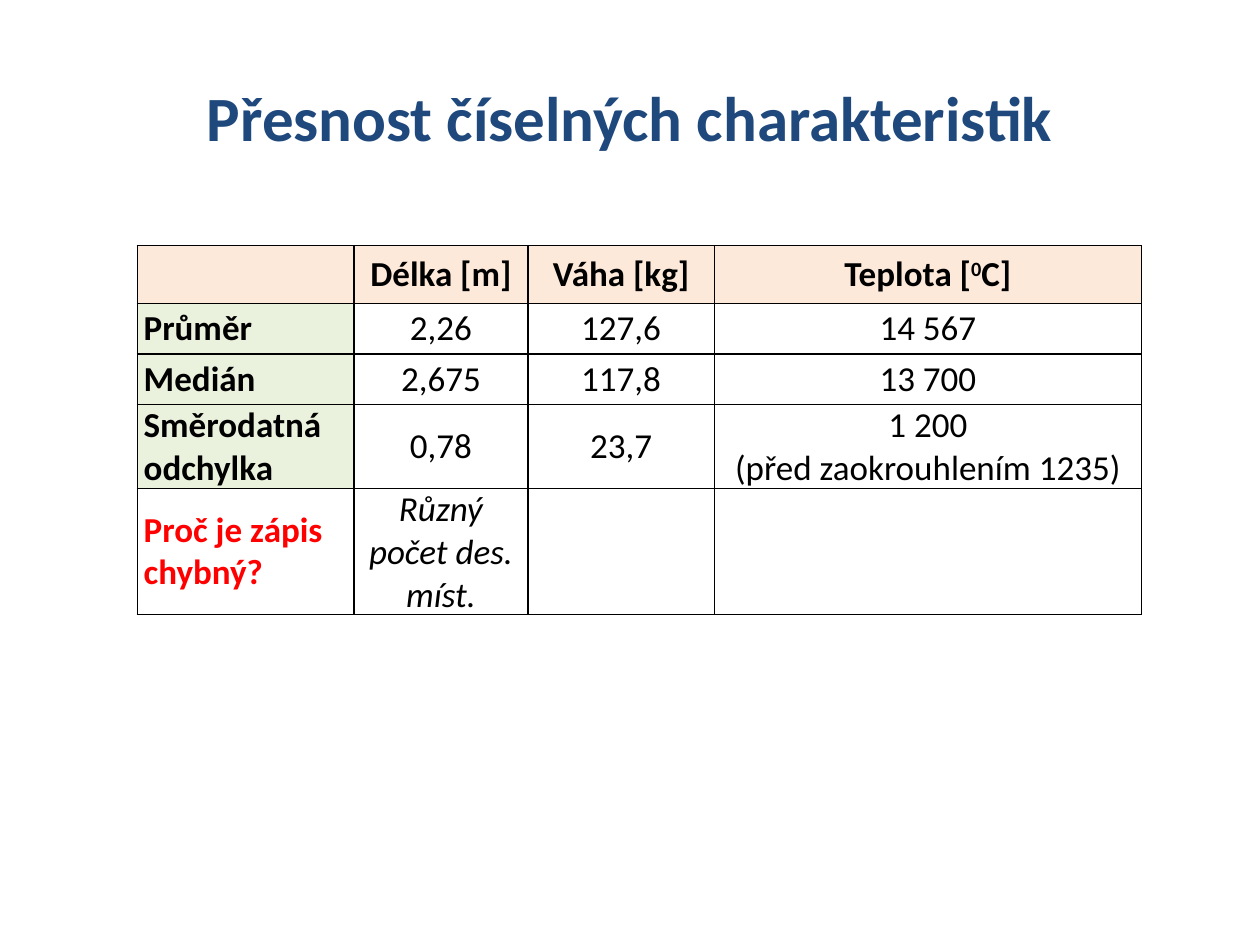
from lxml import etree
from pptx import Presentation
from pptx import util as u
from pptx.dml.color import RGBColor
from pptx.enum import text
from pptx.oxml.ns import qn

FONT = "Calibri"
COLORS = {
    "title": "1F497D",
    "text": "000000",
    "question": "FF0000",
    "border": "000000",
    "header": "FDE9D9",
    "label": "EAF1DD",
}
COLUMNS = [1.72, 1.38, 1.48, 3.39]
ROWS = [0.46, 0.4, 0.4, 0.65, 0.97]
CELLS = [
    ["", "Délka [m]", "Váha [kg]", ("Teplota [", "0", "C]")],
    ["Průměr", "2,26", "127,6", "14 567"],
    ["Medián", "2,675", "117,8", "13 700"],
    ["Směrodatná odchylka", "0,78", "23,7", "1 200\n(před zaokrouhlením 1235)"],
    ["Proč je zápis chybný?", "Různý počet des. míst.", "", ""],
]


def rgb(name):
    return RGBColor.from_string(COLORS[name])


def add_run(p, words, size, color, bold=False, italic=False):
    r = p.add_run()
    r.text = words
    r.font.name = FONT
    r.font.size = u.Pt(size)
    r.font.bold = bold
    r.font.italic = italic
    r.font.color.rgb = rgb(color)
    return r


def add_title(s, words):
    sp = s.shapes.add_textbox(u.Inches(0.5), u.Inches(0.3), u.Inches(9), u.Inches(1.25))
    tf = sp.text_frame
    tf.word_wrap = True
    tf.vertical_anchor = text.MSO_ANCHOR.MIDDLE
    p = tf.paragraphs[0]
    p.alignment = text.PP_ALIGN.CENTER
    add_run(p, words, 36, "title", bold=True)


def set_borders(cell):
    tc_pr = cell._tc.get_or_add_tcPr()
    for side in ("lnL", "lnR", "lnT", "lnB"):
        ln = etree.SubElement(tc_pr, qn(f"a:{side}"), w=str(u.Pt(1)))
        fill = etree.SubElement(ln, qn("a:solidFill"))
        etree.SubElement(fill, qn("a:srgbClr"), val=COLORS["border"])


def set_fill(cell, color):
    if color:
        cell.fill.solid()
        cell.fill.fore_color.rgb = rgb(color)
    else:
        cell.fill.background()


def write_cell(cell, content, align, **style):
    cell.vertical_anchor = text.MSO_ANCHOR.MIDDLE
    cell.margin_left = cell.margin_right = u.Inches(0.05)
    cell.margin_top = cell.margin_bottom = 0
    tf = cell.text_frame
    lines = [content] if isinstance(content, tuple) else [(t,) for t in content.split("\n")]
    for i, parts in enumerate(lines):
        p = tf.add_paragraph() if i else tf.paragraphs[0]
        p.alignment = align
        for j, words in enumerate(parts):
            r = add_run(p, words, 20, **style)
            if j == 1:
                r.font._element.set("baseline", "30000")


def add_statistics_table(s):
    frame = s.shapes.add_table(len(ROWS), len(COLUMNS), u.Inches(1.09), u.Inches(1.95),
                               u.Inches(sum(COLUMNS)), u.Inches(sum(ROWS)))
    table = frame.table
    table.first_row = table.horz_banding = False
    for column, width in zip(table.columns, COLUMNS):
        column.width = u.Inches(width)
    for row, height in zip(table.rows, ROWS):
        row.height = u.Inches(height)
    last = len(ROWS) - 1
    for i, contents in enumerate(CELLS):
        for j, content in enumerate(contents):
            cell = table.cell(i, j)
            set_borders(cell)
            label = j == 0 and 0 < i < last
            set_fill(cell, "header" if i == 0 else "label" if label else None)
            align = text.PP_ALIGN.CENTER if j else text.PP_ALIGN.LEFT
            color = "question" if i == last and j == 0 else "text"
            write_cell(cell, content, align, color=color,
                       bold=i == 0 or j == 0, italic=i == last and j > 0)


def main():
    prs = Presentation()
    prs.slide_width, prs.slide_height = u.Inches(10), u.Inches(7.5)
    s = prs.slides.add_slide(prs.slide_layouts[6])
    add_title(s, "Přesnost číselných charakteristik")
    add_statistics_table(s)
    prs.save("out.pptx")


if __name__ == "__main__":
    main()
